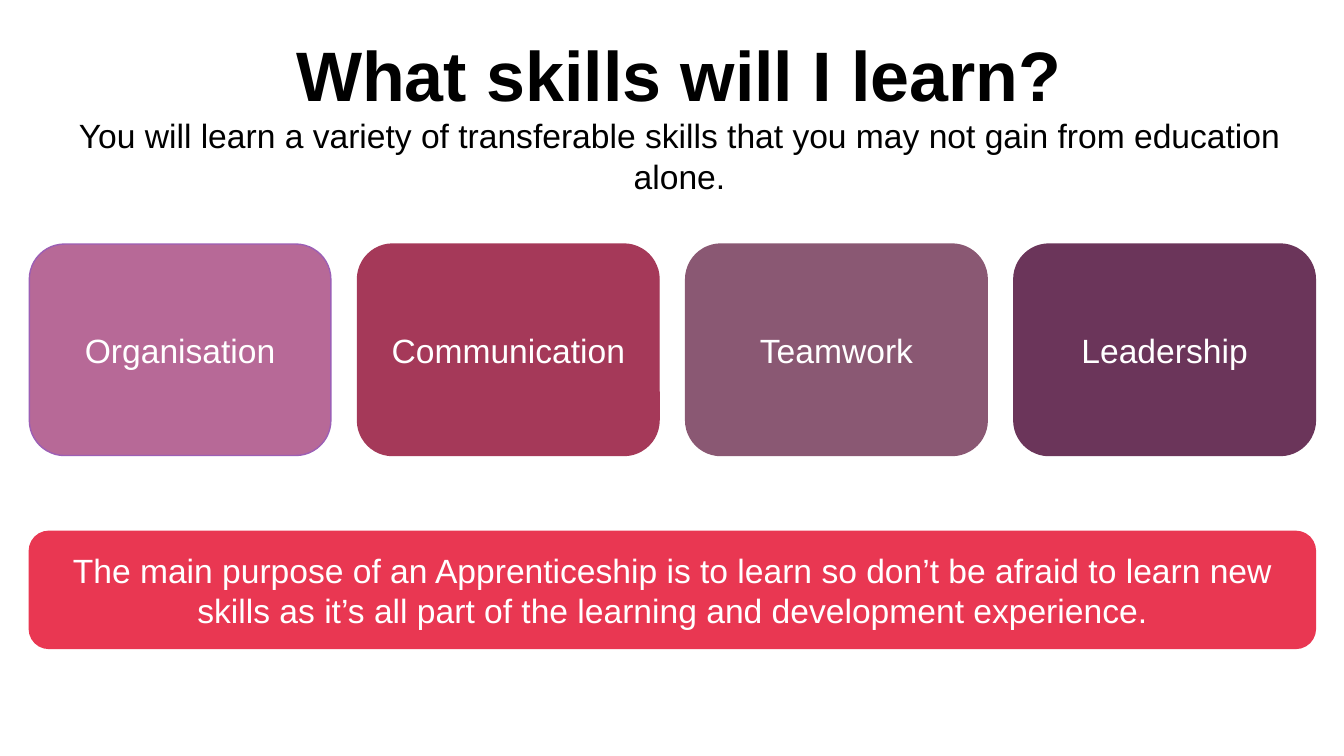
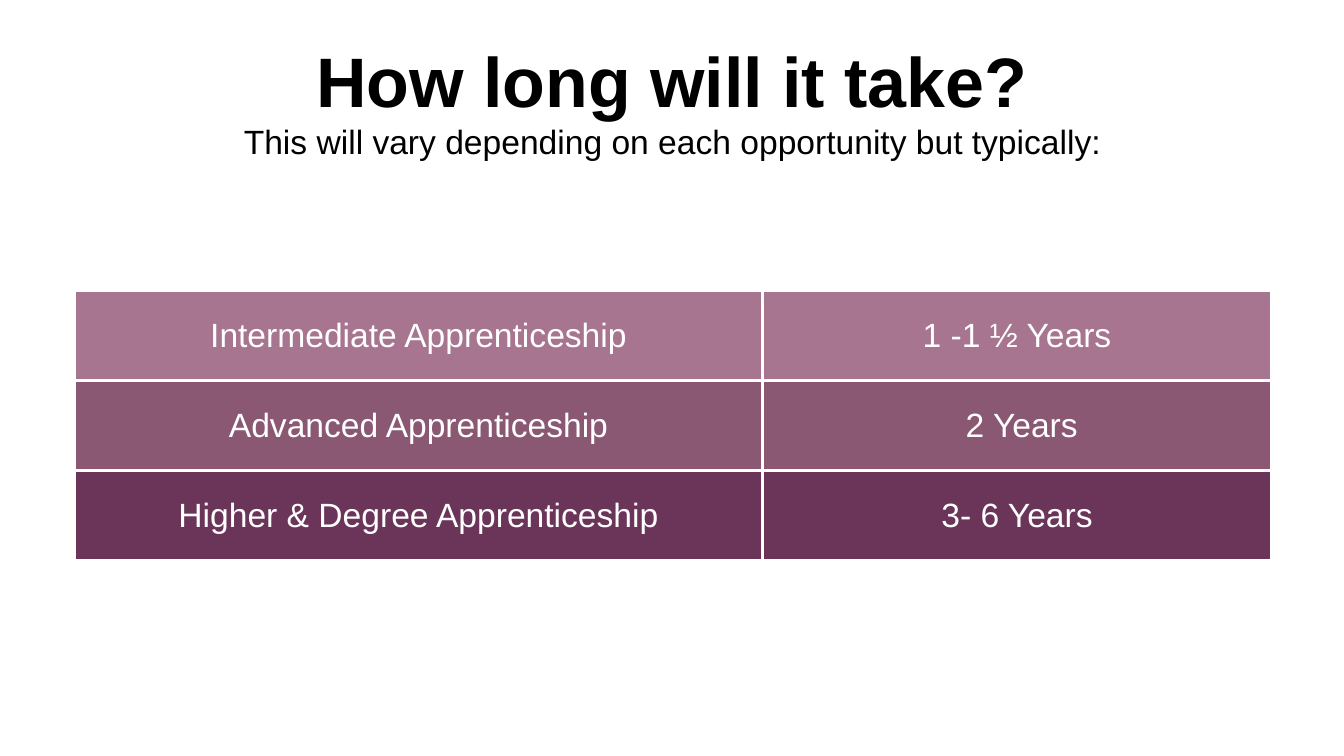
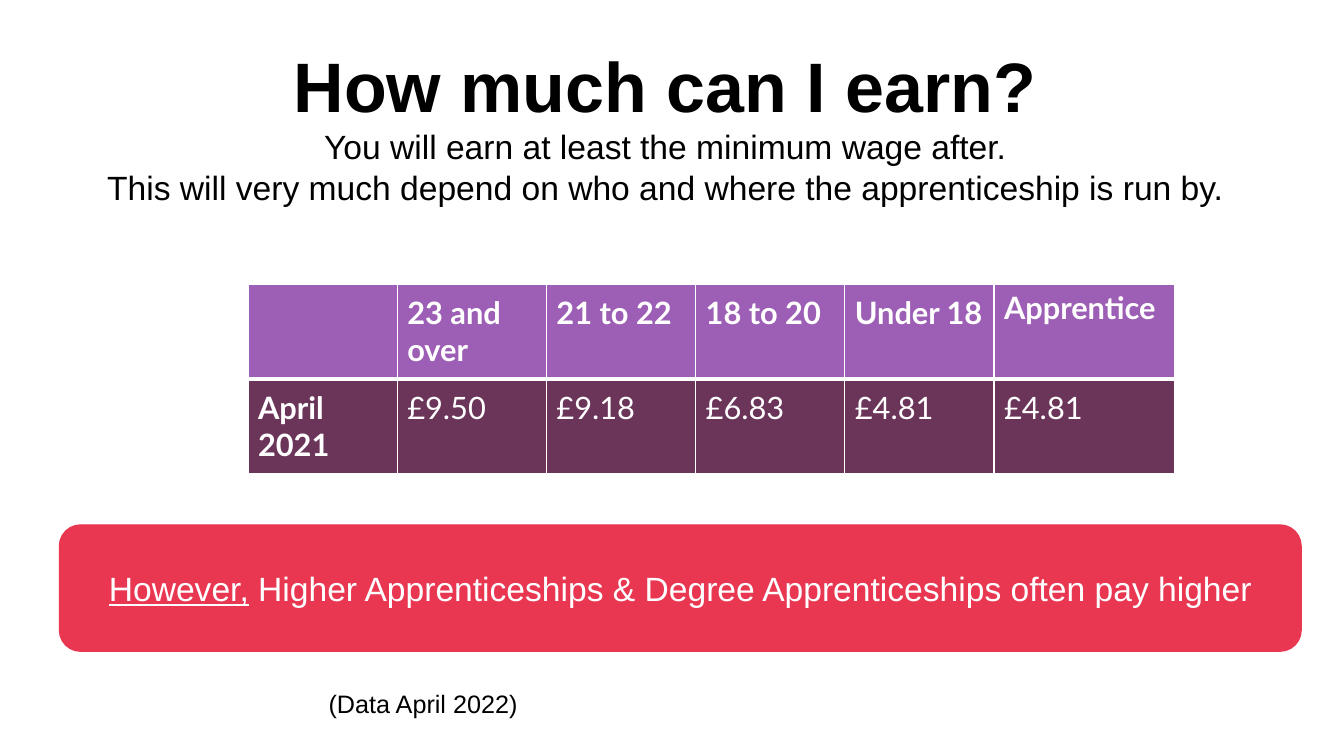
from lxml import etree
from pptx import Presentation
from pptx.dml.color import RGBColor
from pptx.enum.shapes import MSO_SHAPE
from pptx.enum.text import MSO_ANCHOR, MSO_AUTO_SIZE, PP_ALIGN
from pptx.oxml.ns import qn
from pptx.util import Cm, Pt

ROUNDED = MSO_SHAPE.ROUNDED_RECTANGLE
CENTER, LEFT = PP_ALIGN.CENTER, PP_ALIGN.LEFT
TOP, MIDDLE = MSO_ANCHOR.TOP, MSO_ANCHOR.MIDDLE

WHITE, BLACK = "FFFFFF", "000000"
RED, PLUM, MAUVE, PURPLE = "E93752", "6B355A", "8A5873", "9C5FB5"
BODY_FONT, TABLE_FONT = "Arial", "Lato"
BODY_SIZE = 24
EDGE = 0.74

SKILLS_TITLE = [
    "What skills will I learn?",
    "You will learn a variety of transferable skills that you may not gain from education alone.",
]
SKILLS = [
    ("Organisation", "B76997", PURPLE),
    ("Communication", "A53959", "A53959"),
    ("Teamwork", MAUVE, MAUVE),
    ("Leadership", PLUM, PLUM),
]
SKILLS_BANNER = [
    ("The main purpose of an Apprenticeship is to learn so don’t be afraid to learn new "
     "skills as it’s all part of the learning and development experience.", False),
]

DURATION_TITLE = [
    "How long will it take?",
    "This will vary depending on each opportunity but typically:",
]
DURATIONS = [
    ("Intermediate Apprenticeship", "1 -1 ½ Years"),
    ("Advanced Apprenticeship", " 2 Years"),
    ("Higher & Degree Apprenticeship", "3- 6 Years"),
]
DURATION_FILLS = ["A77590", MAUVE, PLUM]

PAY_TITLE = [
    "How much can I earn?",
    "You will earn at least the minimum wage after.",
    "This will very much depend on who and where the apprenticeship is run by.",
]
PAY = [
    ("", "23 and over", "21 to 22", "18 to 20", "Under 18", "Apprentice"),
    ("April 2021", "£9.50", "£9.18", "£6.83", "£4.81", "£4.81"),
]
PAY_FILLS = [PURPLE, PLUM]
PAY_BANNER = [
    ("However,", True),
    (" Higher Apprenticeships & Degree Apprenticeships often pay higher", False),
]
PAY_NOTE = "(Data April 2022)"


def rgb(value):
    return RGBColor.from_string(value)


def style(p, size, color, bold=False, align=CENTER, font=BODY_FONT):
    p.alignment = align
    p.font.name = font
    p.font.size = Pt(size)
    p.font.bold = bold
    p.font.color.rgb = rgb(color)


def add_titled_slide(prs, lines, left, top, width, height):
    s = prs.slides.add_slide(prs.slide_layouts[5])
    title = s.shapes.title
    title.left, title.top, title.width, title.height = map(Cm, (left, top, width, height))
    tf = title.text_frame
    tf.auto_size = MSO_AUTO_SIZE.NONE
    tf.vertical_anchor = TOP
    tf.text = "\n".join(lines)
    for i, p in enumerate(tf.paragraphs):
        style(p, BODY_SIZE if i else 50, BLACK, bold=i == 0)
    return s


def add_box(s, runs, fill, line, left, top, width, height):
    sp = s.shapes.add_shape(ROUNDED, *map(Cm, (left, top, width, height)))
    sp.shadow.inherit = False
    sp.fill.solid()
    sp.fill.fore_color.rgb = rgb(fill)
    sp.line.color.rgb = rgb(line)
    sp.line.width = Pt(1)
    tf = sp.text_frame
    tf.word_wrap = True
    tf.vertical_anchor = MIDDLE
    p = tf.paragraphs[0]
    style(p, BODY_SIZE, WHITE)
    for text, underlined in runs:
        r = p.add_run()
        r.text = text
        if underlined:
            r.font.underline = True


def set_borders(cell, widths):
    tcPr = cell._tc.get_or_add_tcPr()
    for side, width in zip("LRTB", widths):
        ln = etree.SubElement(tcPr, qn(f"a:ln{side}"), w=str(Pt(width)))
        solid = etree.SubElement(ln, qn("a:solidFill"))
        etree.SubElement(solid, qn("a:srgbClr"), val=WHITE)


def add_grid(s, rows, fills, borders, left, top, col_widths, row_height):
    width, height = sum(col_widths), row_height * len(rows)
    frame = s.shapes.add_table(len(rows), len(col_widths), *map(Cm, (left, top, width, height)))
    table = frame.table
    for column, col_width in zip(table.columns, col_widths):
        column.width = Cm(col_width)
    for i, texts in enumerate(rows):
        table.rows[i].height = Cm(row_height)
        for j, text in enumerate(texts):
            cell = table.cell(i, j)
            set_borders(cell, borders[i])
            cell.fill.solid()
            cell.fill.fore_color.rgb = rgb(fills[i])
            cell.text = text
    return table


def build_skills(prs):
    s = add_titled_slide(prs, SKILLS_TITLE, EDGE, 0.66, 32.77, 4.45)
    card_width, gap = 7.6, 0.67
    for i, (name, fill, line) in enumerate(SKILLS):
        left = EDGE + i * (card_width + gap)
        add_box(s, [(name, False)], fill, line, left, 6.15, card_width, 5.33)
    row_width = len(SKILLS) * (card_width + gap) - gap
    add_box(s, SKILLS_BANNER, RED, RED, EDGE, 13.39, row_width, 2.95)


def build_duration(prs):
    s = add_titled_slide(prs, DURATION_TITLE, 5.77, 0.81, 22.35, 3.43)
    borders = [(2.25,) * 4] * len(DURATIONS)
    table = add_grid(s, DURATIONS, DURATION_FILLS, borders, 1.87, 7.32, [17.35, 12.82], 2.27)
    for cell in table.iter_cells():
        cell.vertical_anchor = MIDDLE
        style(cell.text_frame.paragraphs[0], BODY_SIZE, WHITE)


def build_pay(prs):
    s = add_titled_slide(prs, PAY_TITLE, EDGE, 0.94, 32.05, 4.45)
    add_box(s, PAY_BANNER, RED, RED, 1.5, 13.23, 31.29, 3.18)

    note = s.shapes.add_textbox(*map(Cm, (8.03, 17.22, 6.27, 1.02)))
    tf = note.text_frame
    tf.word_wrap = True
    tf.text = PAY_NOTE
    style(tf.paragraphs[0], 18, BLACK, align=LEFT)

    borders = [(1, 1, 1, 3), (1, 1, 3, 1)]
    table = add_grid(s, PAY, PAY_FILLS, borders, 6.25, 7.16, [3.76] * 5 + [4.55], 2.39)
    for i, texts in enumerate(PAY):
        for j, text in enumerate(texts):
            cell = table.cell(i, j)
            if text != "Apprentice":
                cell.margin_top = cell.margin_bottom = Cm(0.25)
            style(cell.text_frame.paragraphs[0], 22, WHITE, i == 0 or j == 0, LEFT, TABLE_FONT)


def main():
    prs = Presentation()
    prs.slide_width, prs.slide_height = Cm(33.87), Cm(19.05)
    build_skills(prs)
    build_duration(prs)
    build_pay(prs)
    prs.save("out.pptx")


if __name__ == "__main__":
    main()
